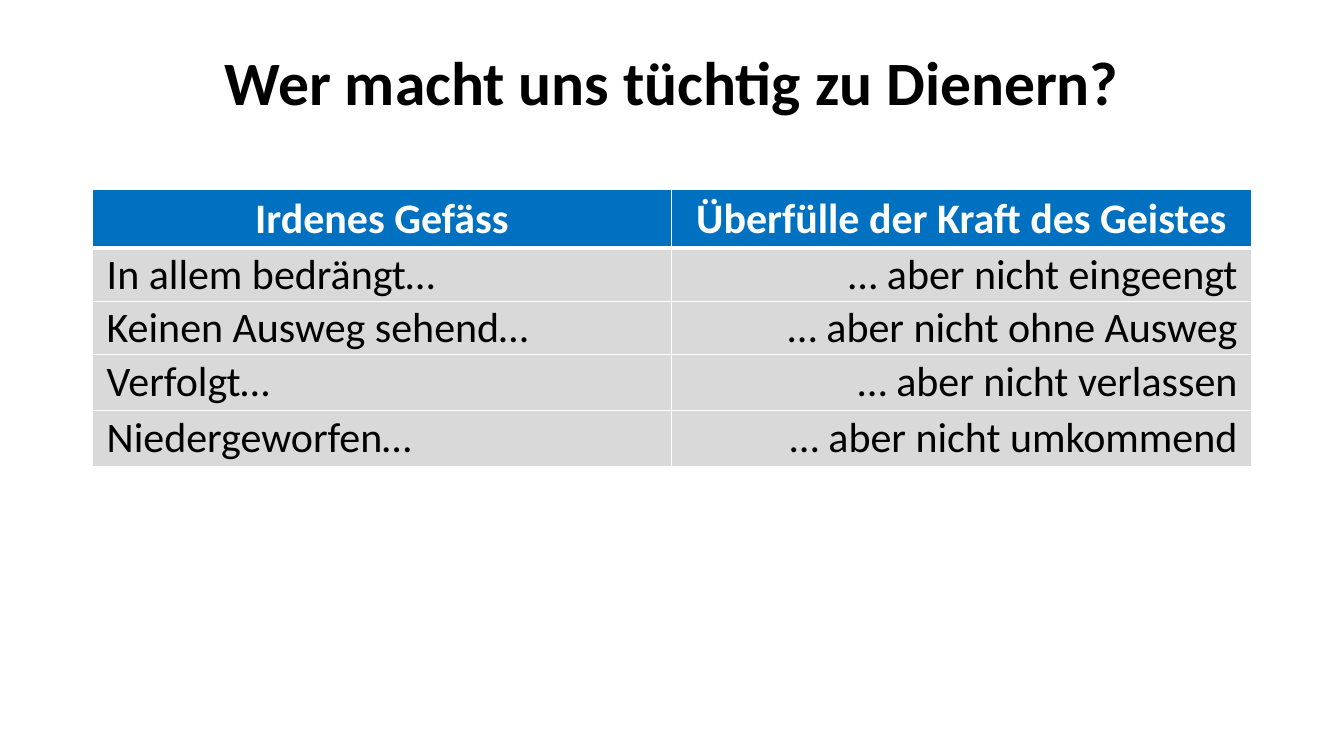
from dataclasses import dataclass

from lxml import etree
from pptx import Presentation
from pptx.dml.color import RGBColor
from pptx.enum import text
from pptx.oxml.ns import qn
from pptx.util import Pt

FONT = "Calibri"
LEFT, WIDTH = 66.24, 828
COLUMN_WIDTHS = (413.28, 414.72)
ROW_HEIGHTS = (41.76, 38.16, 38.16, 39.6, 40.32)
THIN, THICK = 1, 3


@dataclass(frozen=True)
class RowStyle:
    fill: str
    color: str
    bold: bool
    aligns: tuple
    top: float
    bottom: float


@dataclass(frozen=True)
class Row:
    cells: tuple
    style: RowStyle


CENTER, START, END = text.PP_ALIGN.CENTER, text.PP_ALIGN.LEFT, text.PP_ALIGN.RIGHT
HEADER = RowStyle("0070C0", "FFFFFF", True, (CENTER, CENTER), THIN, THICK)
FIRST = RowStyle("D9D9D9", "000000", False, (START, END), THICK, THIN)
BODY = RowStyle("D9D9D9", "000000", False, (START, END), THIN, THIN)

ROWS = (
    Row(("Irdenes Gefäss", "Überfülle der Kraft des Geistes"), HEADER),
    Row(("In allem bedrängt…", "… aber nicht eingeengt"), FIRST),
    Row(("Keinen Ausweg sehend…", "… aber nicht ohne Ausweg"), BODY),
    Row(("Verfolgt…", "… aber nicht verlassen"), BODY),
    Row(("Niedergeworfen…", "… aber nicht umkommend"), BODY),
)


def rgb(value: str) -> RGBColor:
    return RGBColor.from_string(value)


def format_paragraph(p, size: float, color: str, bold: bool, align) -> None:
    p.alignment = align
    for r in p.runs:
        r.font.name = FONT
        r.font.size = Pt(size)
        r.font.bold = bold
        r.font.color.rgb = rgb(color)


def add_border(cell, side: str, width: float) -> None:
    tcPr = cell._tc.get_or_add_tcPr()
    ln = etree.SubElement(tcPr, qn(f"a:ln{side}"), w=str(int(Pt(width))))
    fill = etree.SubElement(ln, qn("a:solidFill"))
    etree.SubElement(fill, qn("a:srgbClr"), val="FFFFFF")


def fill_cell(cell, content: str, style: RowStyle, align) -> None:
    cell.text_frame.text = content
    cell.vertical_anchor = text.MSO_ANCHOR.MIDDLE
    cell.margin_left = cell.margin_right = Pt(10)
    cell.margin_top = cell.margin_bottom = Pt(0)
    format_paragraph(cell.text_frame.paragraphs[0], 30, style.color, style.bold, align)
    for side, width in (("L", THIN), ("R", THIN), ("T", style.top), ("B", style.bottom)):
        add_border(cell, side, width)
    cell.fill.solid()
    cell.fill.fore_color.rgb = rgb(style.fill)


def add_title(s, content: str) -> None:
    sp = s.shapes.title
    sp.left, sp.top, sp.width, sp.height = Pt(LEFT), Pt(28.8), Pt(WIDTH), Pt(64.08)
    tf = sp.text_frame
    tf.text = content
    tf.vertical_anchor = text.MSO_ANCHOR.MIDDLE
    p = tf.paragraphs[0]
    p.line_spacing = 0.9
    format_paragraph(p, 44, "000000", True, CENTER)


def add_comparison(s) -> None:
    table = s.shapes.add_table(
        len(ROWS), len(COLUMN_WIDTHS), Pt(LEFT), Pt(135.36), Pt(WIDTH), Pt(sum(ROW_HEIGHTS))
    ).table
    table.horz_banding = False
    for column, width in zip(table.columns, COLUMN_WIDTHS):
        column.width = Pt(width)
    for table_row, height, row in zip(table.rows, ROW_HEIGHTS, ROWS):
        table_row.height = Pt(height)
        for cell, content, align in zip(table_row.cells, row.cells, row.style.aligns):
            fill_cell(cell, content, row.style, align)


def main() -> None:
    prs = Presentation()
    prs.slide_width, prs.slide_height = Pt(960), Pt(540)
    s = prs.slides.add_slide(prs.slide_layouts.get_by_name("Title Only"))
    add_title(s, "Wer macht uns tüchtig zu Dienern?")
    add_comparison(s)
    prs.save("out.pptx")


if __name__ == "__main__":
    main()
